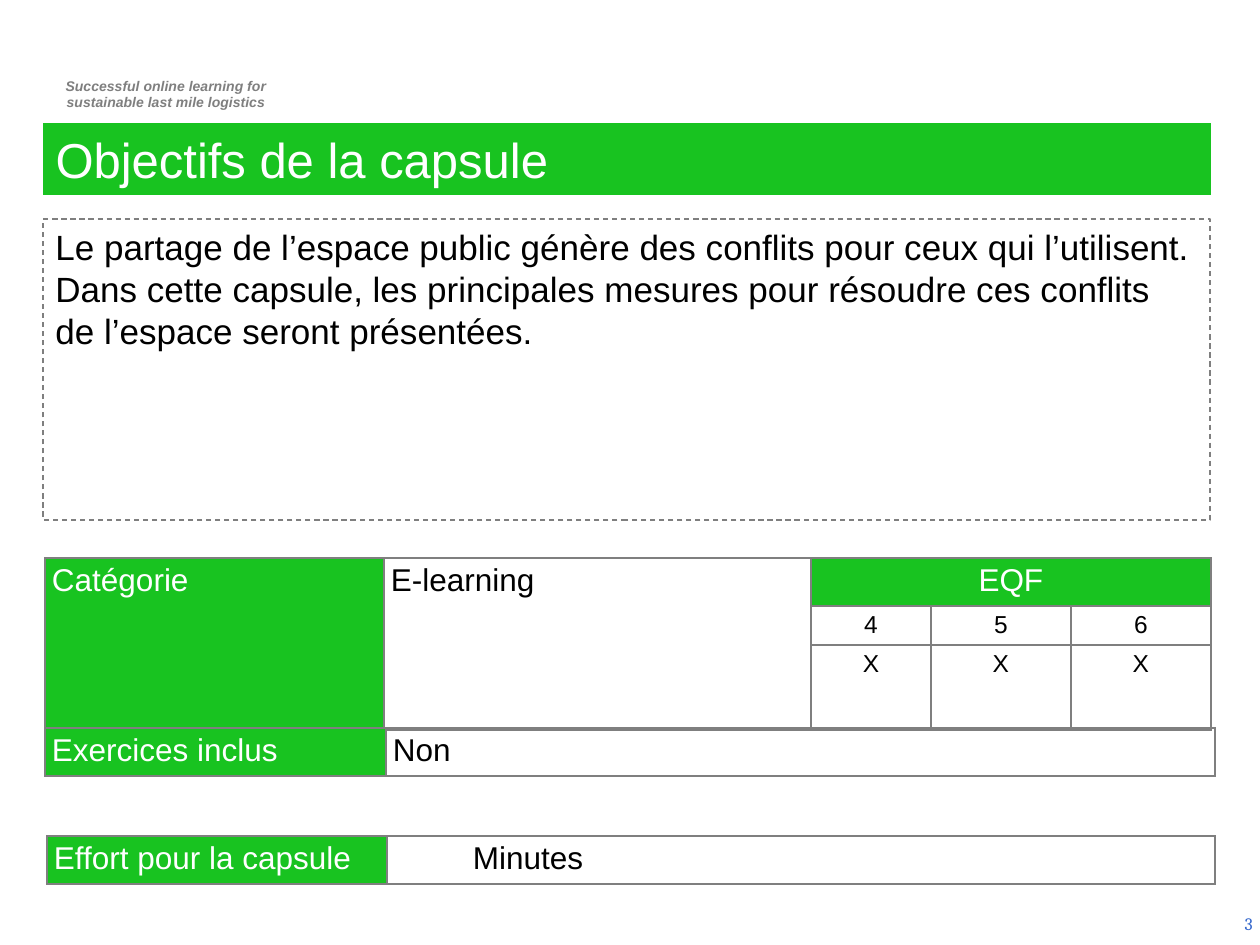
from lxml.etree import SubElement as Sub
from pptx import Presentation
from pptx.dml.color import RGBColor as RGB
from pptx.enum.dml import MSO_LINE as Dash
from pptx.enum.shapes import MSO_SHAPE as Shape
from pptx.enum.text import MSO_ANCHOR as Anchor, PP_ALIGN as Align
from pptx.oxml.ns import qn
from pptx.util import Emu, Inches, Pt

GREEN = RGB(0x18, 0xC3, 0x20)
GREY = RGB(0x7F, 0x7F, 0x7F)
BLUE = RGB(0x33, 0x66, 0xCC)
WHITE = RGB(0xFF, 0xFF, 0xFF)
BLACK = RGB(0, 0, 0)
SCALE = 914400 / 126


def px(n):
    return Emu(round(n * SCALE))


def write(frame, text, size=18, color=BLACK, font="Arial", bold=False,
          slant=False, align=Align.LEFT, anchor=Anchor.TOP):
    frame.word_wrap = True
    frame.vertical_anchor = anchor
    frame.text = text
    for para in frame.paragraphs:
        para.alignment = align
        para.space_before = Pt(0)
        for run in para.runs:
            style = run.font
            style.name, style.size = font, Pt(size)
            style.bold, style.italic = bold, slant
            style.color.rgb = color


class Page:
    line = GREY
    inset = 7

    def __init__(self, deck):
        self.slide = deck.slides.add_slide(deck.slide_layouts[5])

    def label(self, x, y, w, h, text, **form):
        box = self.slide.shapes.add_textbox(px(x), px(y), px(w), px(h))
        write(box.text_frame, text, **form)

    def title(self, x, y, w, h, text, **form):
        head = self.slide.shapes.title
        head.left, head.top, head.width, head.height = map(px, (x, y, w, h))
        head.fill.solid()
        head.fill.fore_color.rgb = GREEN
        write(head.text_frame, text, **form)

    def panel(self, x, y, w, h, text, **form):
        box = self.slide.shapes.add_shape(Shape.RECTANGLE, px(x), px(y), px(w), px(h))
        box.shadow.inherit = False
        box.fill.background()
        box.line.color.rgb = self.line
        box.line.width = Pt(0.75)
        box.line.dash_style = Dash.DASH
        write(box.text_frame, text, **form)

    def table(self, x, y, cols, rows):
        frame = self.slide.shapes.add_table(
            len(rows), len(cols), px(x), px(y), px(sum(cols)), px(sum(rows)))
        grid = frame.table
        grid.first_row = grid.horz_banding = False
        for col, wide in zip(grid.columns, cols):
            col.width = px(wide)
        for row, high in zip(grid.rows, rows):
            row.height = px(high)
        for cell in grid.iter_cells():
            self.border(cell)
            cell.fill.background()
        return grid

    def border(self, cell):
        props = cell._tc.get_or_add_tcPr()
        for side in "LRTB":
            edge = Sub(props, qn(f"a:ln{side}"), w=str(Pt(1)))
            Sub(Sub(edge, qn("a:solidFill")), qn("a:srgbClr"), val=str(self.line))

    def cell(self, grid, row, col, text, fill=None, indent=0, **form):
        cell = grid.cell(row, col)
        cell.margin_left = px(self.inset + indent)
        cell.margin_right = px(self.inset)
        cell.margin_top = cell.margin_bottom = px(5)
        if fill:
            cell.fill.solid()
            cell.fill.fore_color.rgb = fill
            form["color"] = WHITE
        write(cell.text_frame, text, **form)

    def pair(self, x, y, cols, name, value, indent=0):
        grid = self.table(x, y, cols, [47])
        self.cell(grid, 0, 0, name, fill=GREEN)
        self.cell(grid, 0, 1, value, indent=indent)


def main():
    deck = Presentation()
    deck.slide_width, deck.slide_height = Inches(10), Inches(7.5)
    page = Page(deck)
    page.label(38, 71, 256, 47,
               "Successful online learning for\nsustainable last mile logistics",
               size=8, color=GREY, bold=True, slant=True, align=Align.CENTER)
    page.label(971, 899, 294, 50, "3", size=10, color=BLUE, font="Cambria",
               align=Align.RIGHT, anchor=Anchor.MIDDLE)
    page.title(43, 123, 1168, 72, "Objectifs de la capsule", size=28, color=WHITE)
    page.panel(43, 219, 1167, 301,
               "Le partage de l’espace public génère des conflits pour ceux qui "
               "l’utilisent. Dans cette capsule, les principales mesures pour "
               "résoudre ces conflits de l’espace seront présentées.", size=20)

    grid = page.table(45, 558, [339, 427, 120, 140, 140], [47, 39, 85])
    for col in range(2):
        grid.cell(0, col).merge(grid.cell(2, col))
    grid.cell(0, 2).merge(grid.cell(0, 4))
    page.cell(grid, 0, 0, "Catégorie", fill=GREEN)
    page.cell(grid, 0, 1, "E-learning")
    page.cell(grid, 0, 2, "EQF", fill=GREEN, align=Align.CENTER)
    for col, level in enumerate("456", 2):
        for row, mark in enumerate((level, "X"), 1):
            page.cell(grid, row, col, mark, size=14, align=Align.CENTER)

    page.pair(45, 728, [341, 829], "Exercices inclus", "Non")
    page.pair(47, 836, [340, 828], "Effort pour la capsule", "Minutes", indent=79)
    deck.save("out.pptx")


if __name__ == "__main__":
    main()
